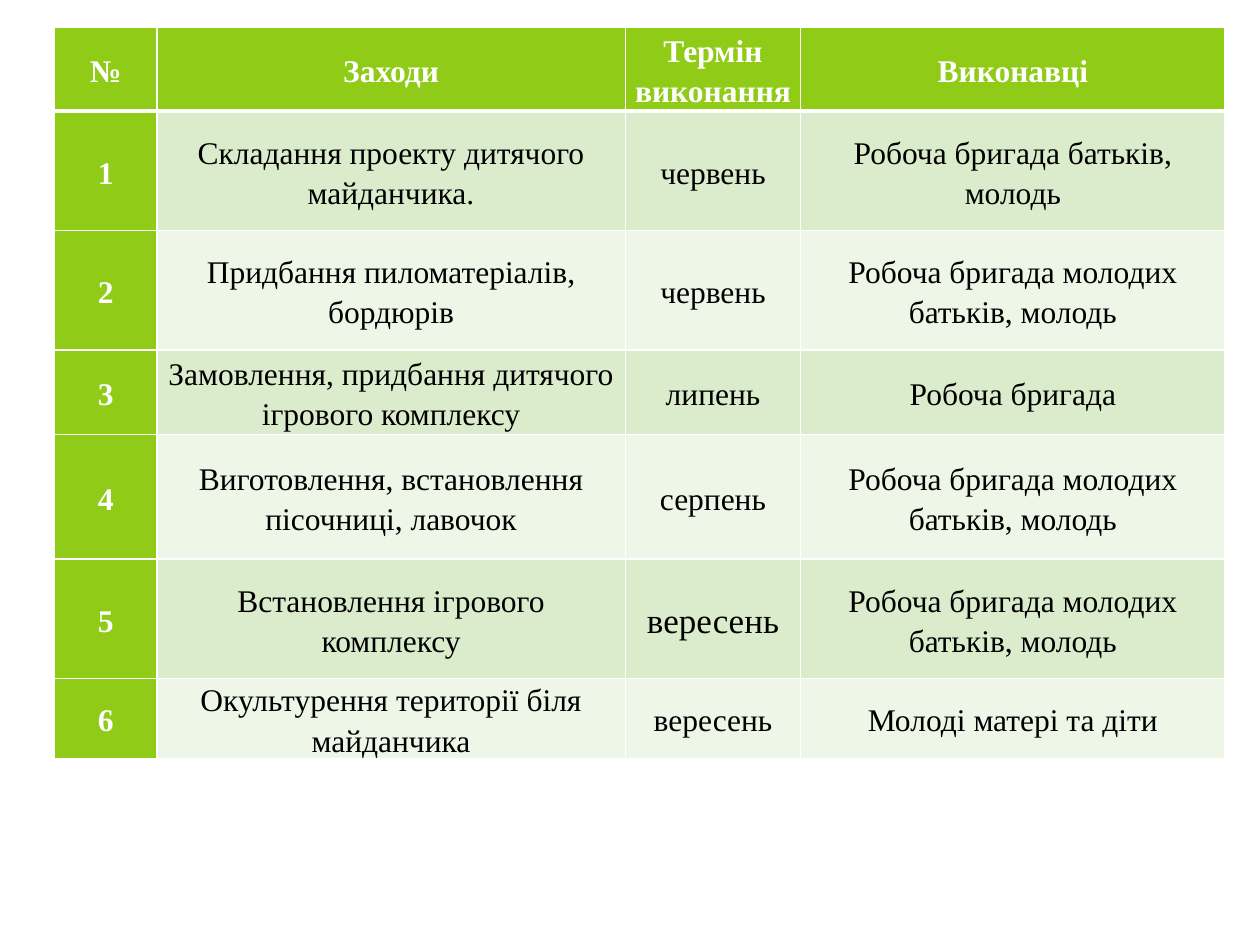
from lxml import etree
from pptx import Presentation
from pptx import util as u
from pptx.dml.color import RGBColor
from pptx.enum import text
from pptx.oxml.ns import qn

HUES = {"head": "8FCB17", "odd": "DBECCC", "even": "EEF6E8",
        "light": "FFFFFF", "dark": "000000"}
COLS = [2.06, 9.45, 3.53, 8.56]
TALL = [1.7, 2.41, 2.41, 1.7, 2.51, 2.41, 1.6]
CREW = "Робоча бригада молодих батьків, молодь"
PLAN = [
    ("№", "Заходи", "Термін виконання", "Виконавці"),
    ("1", "Складання проекту дитячого майданчика.", "червень",
     "Робоча бригада батьків, молодь"),
    ("2", "Придбання пиломатеріалів, бордюрів", "червень", CREW),
    ("3", "Замовлення, придбання дитячого ігрового комплексу", "липень",
     "Робоча бригада"),
    ("4", "Виготовлення, встановлення пісочниці, лавочок", "серпень", CREW),
    ("5", "Встановлення ігрового комплексу", "вересень", CREW),
    ("6", "Окультурення території біля майданчика", "вересень",
     "Молоді матері та діти"),
]
SIZES = {(5, 2): 20}
CELL = {"vertical_anchor": text.MSO_ANCHOR.MIDDLE,
        "margin_left": u.Cm(0.15), "margin_right": u.Cm(0.15),
        "margin_top": 0, "margin_bottom": 0}
PARA = {"alignment": text.PP_ALIGN.CENTER, "line_spacing": 1.15}


def apply(item, looks):
    """Set each named attribute of an item."""
    for name, value in looks.items():
        setattr(item, name, value)


def edge(cell, side, width):
    """Draw one light border of a cell, width in points."""
    line = etree.SubElement(cell._tc.get_or_add_tcPr(), qn(f"a:ln{side}"),
                            w=str(u.Pt(width)))
    fill = etree.SubElement(line, qn("a:solidFill"))
    etree.SubElement(fill, qn("a:srgbClr"), val=HUES["light"])


def style(cell, row, col):
    """Format a cell by its place in the plan."""
    main = row == 0 or col == 0
    apply(cell, CELL)
    for side in "LRTB":
        thick = (row, side) in ((0, "B"), (1, "T"))
        edge(cell, side, 3 if thick else 1)
    hue = "head" if main else "odd" if row % 2 else "even"
    cell.fill.solid()
    cell.fill.fore_color.rgb = RGBColor.from_string(HUES[hue])
    para = cell.text_frame.paragraphs[0]
    apply(para, PARA)
    font = para.runs[0].font
    apply(font, {"name": "Times New Roman", "bold": main,
                 "size": u.Pt(SIZES.get((row, col), 18))})
    font.color.rgb = RGBColor.from_string(HUES["light" if main else "dark"])


def draw_plan(slide, left, top, width, height):
    """Place the work plan table in a box given in centimetres."""
    frame = slide.shapes.add_table(len(PLAN), len(COLS), u.Cm(left), u.Cm(top),
                                   u.Cm(width), u.Cm(height))
    table = frame.table
    for col, part in zip(table.columns, COLS):
        col.width = u.Cm(width * part / sum(COLS))
    for row, part in zip(table.rows, TALL):
        row.height = u.Cm(height * part / sum(TALL))
    for r, words in enumerate(PLAN):
        for c, word in enumerate(words):
            cell = table.cell(r, c)
            cell.text = word
            style(cell, r, c)


def main():
    """Build and save the slide."""
    deck = Presentation()
    apply(deck, {"slide_width": u.Cm(25.4), "slide_height": u.Cm(19.05)})
    slide = deck.slides.add_slide(deck.slide_layouts[6])
    draw_plan(slide, 1.1, 0.54, 23.6, 14.74)
    deck.save("out.pptx")


if __name__ == "__main__":
    main()
